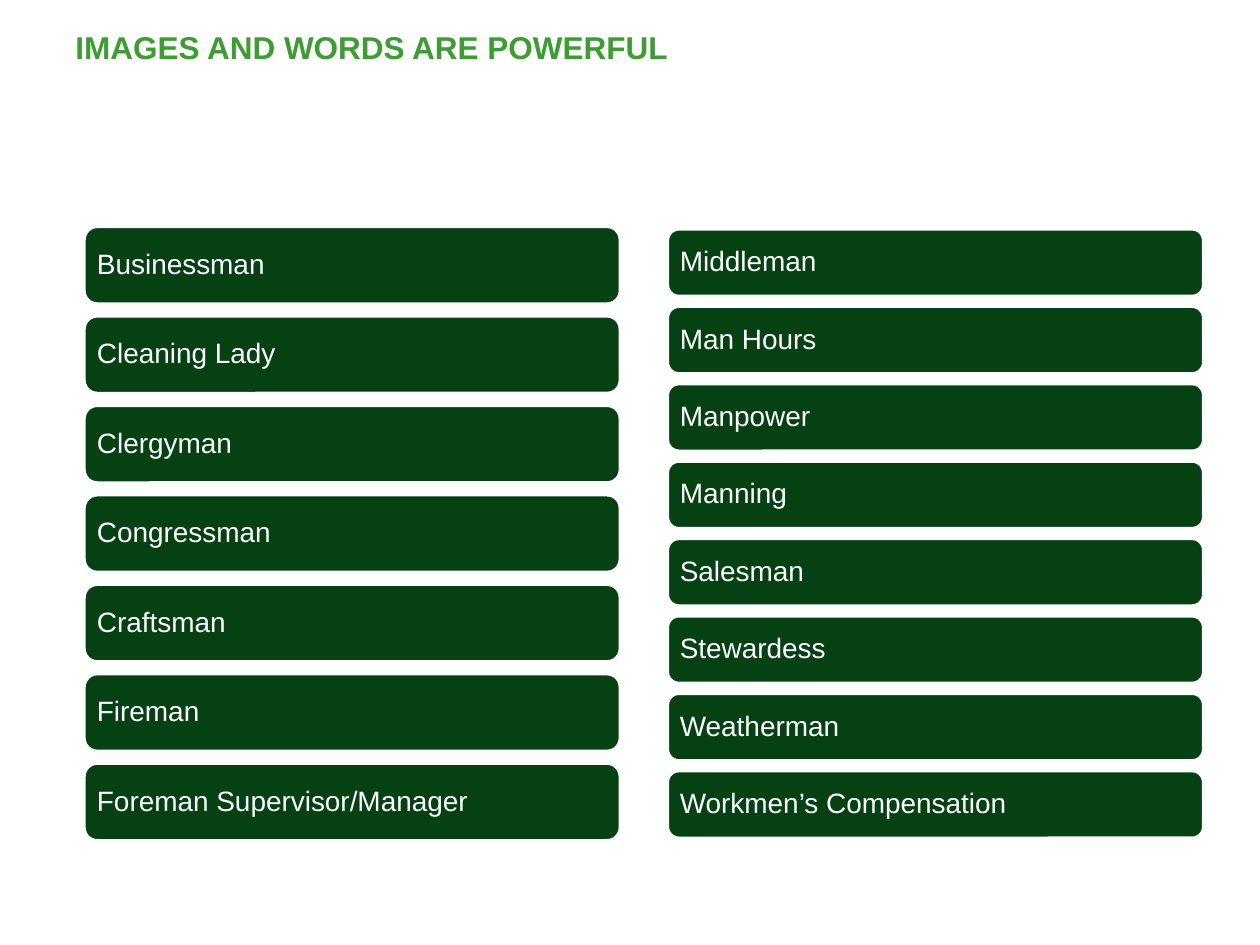
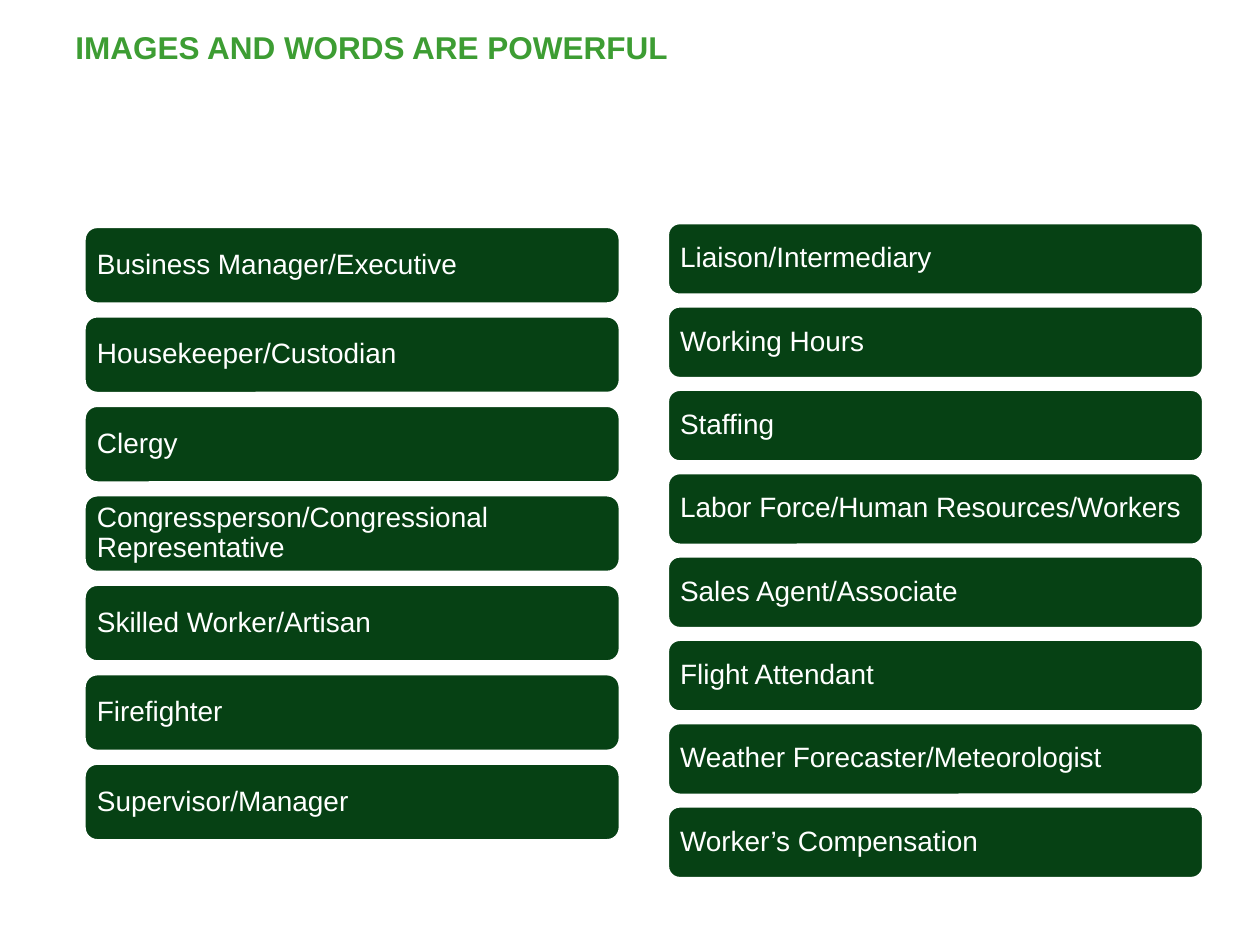
import pptx
import pptx.util
import pptx.dml.color
import pptx.enum.shapes
import pptx.enum.text

# Content: each slide has two columns of terms
TITLE = "IMAGES AND WORDS ARE POWERFUL"
GENDERED_TERMS = (
    ["Businessman", "Cleaning Lady", "Clergyman", "Congressman", "Craftsman",
     "Fireman", "Foreman Supervisor/Manager"],
    ["Middleman", "Man Hours", "Manpower", "Manning", "Salesman",
     "Stewardess", "Weatherman", "Workmen’s Compensation"],
)
INCLUSIVE_TERMS = (
    ["Business Manager/Executive", "Housekeeper/Custodian", "Clergy",
     "Congressperson/Congressional Representative", "Skilled Worker/Artisan",
     "Firefighter", "Supervisor/Manager"],
    ["Liaison/Intermediary", "Working Hours", "Staffing",
     "Labor Force/Human Resources/Workers", "Sales Agent/Associate",
     "Flight Attendant", "Weather Forecaster/Meteorologist",
     "Worker’s Compensation"],
)

# Column layouts in inches: top of first bar, top of last bar, bar height
LEFT_ROWS = (1.8, 6.06, 0.61)
SLIDES = [
    (GENDERED_TERMS, (LEFT_ROWS, (1.82, 6.12, 0.53))),
    (INCLUSIVE_TERMS, (LEFT_ROWS, (1.77, 6.4, 0.57))),
]

# Shared style
SLIDE_WIDTH, SLIDE_HEIGHT = 10, 7.5
COLUMN_LEFTS = (0.67, 5.3)
BAR_WIDTH = 4.25
BAR_MARGIN = 0.07
FONT = "Arial"
BAR_GREEN, TITLE_GREEN, WHITE = "064114", "3D9D33", "FFFFFF"

inches = pptx.util.Inches


def color(hex_value):
    return pptx.dml.color.RGBColor.from_string(hex_value)


def write(shape, text, size, hex_value, bold=False):
    frame = shape.text_frame
    frame.word_wrap = True
    frame.text = text
    para = frame.paragraphs[0]
    para.alignment = pptx.enum.text.PP_ALIGN.LEFT
    font = para.runs[0].font
    font.name, font.size, font.bold = FONT, pptx.util.Pt(size), bold
    font.color.rgb = color(hex_value)
    return para


def add_title(page):
    box = page.shapes.add_textbox(inches(0.5), inches(0.17), inches(9), inches(0.4))
    write(box, TITLE, 18, TITLE_GREEN, bold=True)


def add_bar(page, term, left, top, height):
    bar = page.shapes.add_shape(
        pptx.enum.shapes.MSO_SHAPE.ROUNDED_RECTANGLE,
        inches(left), inches(top), inches(BAR_WIDTH), inches(height))
    bar.shadow.inherit = False
    bar.fill.solid()
    bar.fill.fore_color.rgb = color(BAR_GREEN)
    bar.line.color.rgb = color(WHITE)
    bar.line.width = pptx.util.Pt(1.5)
    frame = bar.text_frame
    frame.margin_left = frame.margin_right = inches(BAR_MARGIN)
    frame.margin_top = frame.margin_bottom = inches(BAR_MARGIN)
    frame.vertical_anchor = pptx.enum.text.MSO_ANCHOR.MIDDLE
    write(bar, term, 16, WHITE).line_spacing = 0.9


def add_column(page, terms, left, rows):
    first_top, last_top, height = rows
    pitch = (last_top - first_top) / (len(terms) - 1)
    for row, term in enumerate(terms):
        add_bar(page, term, left, first_top + row * pitch, height)


def main():
    deck = pptx.Presentation()
    deck.slide_width = inches(SLIDE_WIDTH)
    deck.slide_height = inches(SLIDE_HEIGHT)
    for columns, layouts in SLIDES:
        page = deck.slides.add_slide(deck.slide_layouts[6])
        for terms, left, rows in zip(columns, COLUMN_LEFTS, layouts):
            add_column(page, terms, left, rows)
        add_title(page)
    deck.save("out.pptx")


if __name__ == "__main__":
    main()
